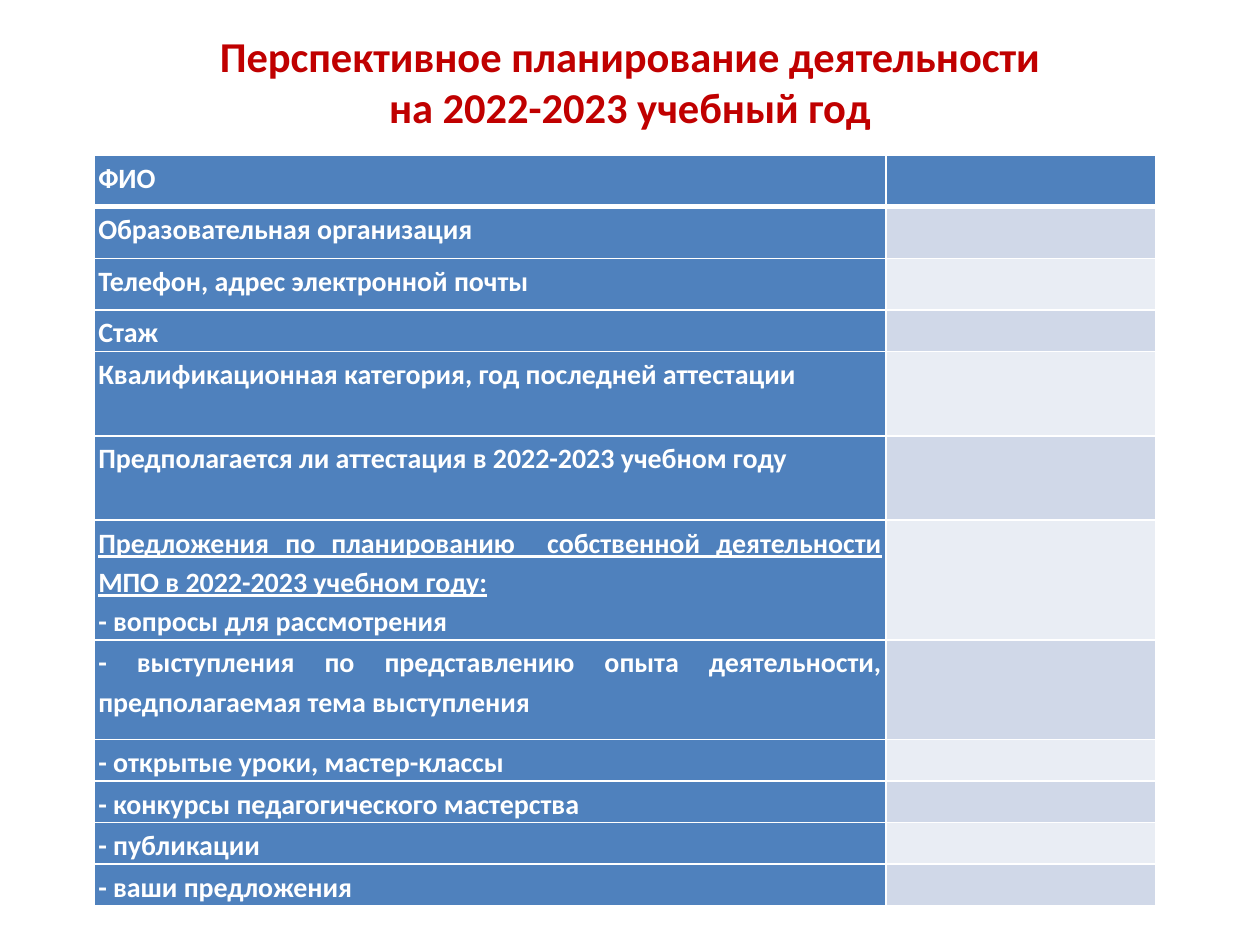
from lxml import etree
from pptx import Presentation
from pptx.dml.color import RGBColor
from pptx.enum.text import MSO_ANCHOR, PP_ALIGN
from pptx.oxml.ns import qn
from pptx.util import Inches, Pt

RED, WHITE, BLUE = "C00000", "FFFFFF", "4F81BD"
BANDS = ["E9EDF4", "D0D8E8"]

TITLE = "Перспективное планирование деятельности\vна 2022-2023 учебный год"

# Row height in inches, then the paragraphs of the label
ROWS = [
    (0.41, ["ФИО"]),
    (0.41, ["Образовательная организация"]),
    (0.41, ["Телефон, адрес электронной почты"]),
    (0.33, ["Стаж"]),
    (0.67, ["Квалификационная категория, год последней аттестации"]),
    (0.67, ["Предполагается ли аттестация в 2022-2023 учебном году"]),
    (0.95, ["Предложения по планированию  собственной деятельности "
            "МПО в 2022-2023 учебном году:",
            "- вопросы для рассмотрения"]),
    (0.79, ["- выступления по представлению опыта деятельности, "
            "предполагаемая тема выступления"]),
    (0.33, ["- открытые уроки, мастер-классы"]),
    (0.33, ["- конкурсы педагогического мастерства"]),
    (0.33, ["- публикации"]),
    (0.33, ["- ваши предложения"]),
]
COLUMN_WIDTHS = [6.28, 2.14]
CELL_MARGINS = {"margin_left": Inches(0.03), "margin_top": Inches(0.01),
                "margin_right": Inches(0.03), "margin_bottom": 0}


def color(hex_value):
    return RGBColor.from_string(hex_value)


def apply(target, values):
    for name, value in values.items():
        setattr(target, name, value)


def style_runs(paragraph, size, hex_value, underline=False):
    for run in paragraph.runs:
        apply(run.font, {"name": "Calibri", "size": Pt(size), "bold": True,
                         "underline": underline})
        run.font.color.rgb = color(hex_value)


def set_borders(cell, widths):
    """Draw white borders; widths maps a side (L, R, T, B) to points."""
    properties = cell._tc.get_or_add_tcPr()
    for position, (side, width) in enumerate(widths.items()):
        line = etree.Element(qn(f"a:ln{side}"), w=str(Pt(width)))
        fill = etree.SubElement(line, qn("a:solidFill"))
        etree.SubElement(fill, qn("a:srgbClr"), val=WHITE)
        properties.insert(position, line)


def add_title(slide, left, top, width, height):
    frame = slide.shapes.add_textbox(left, top, width, height).text_frame
    apply(frame, {"word_wrap": True, "vertical_anchor": MSO_ANCHOR.MIDDLE})
    heading = frame.paragraphs[0]
    heading.text = TITLE
    heading.alignment = PP_ALIGN.CENTER
    style_runs(heading, 24.3, RED)


def fill_label(cell, lines):
    frame = cell.text_frame
    frame.text = "\n".join(lines)
    for paragraph in frame.paragraphs:
        apply(paragraph, {"alignment": PP_ALIGN.JUSTIFY, "line_spacing": 1.15})
        # The lead line of a list of proposals is underlined
        style_runs(paragraph, 16, WHITE, paragraph.text.endswith(":"))


def add_plan_table(slide, left, top, width, height):
    table = slide.shapes.add_table(len(ROWS), len(COLUMN_WIDTHS),
                                   left, top, width, height).table
    for column, column_width in zip(table.columns, COLUMN_WIDTHS):
        column.width = Inches(column_width)

    for index, (row_height, lines) in enumerate(ROWS):
        table.rows[index].height = Inches(row_height)
        label, answer = table.cell(index, 0), table.cell(index, 1)
        fill_label(label, lines)
        answer_fill = BLUE if index == 0 else BANDS[index % 2]
        borders = {"L": 1, "R": 1, "T": 3 if index == 1 else 1,
                   "B": 3 if index == 0 else 1}
        for cell, fill in ((label, BLUE), (answer, answer_fill)):
            apply(cell, CELL_MARGINS)
            cell.fill.solid()
            cell.fill.fore_color.rgb = color(fill)
            set_borders(cell, borders)


def main():
    presentation = Presentation()
    apply(presentation, {"slide_width": Inches(10), "slide_height": Inches(7.5)})
    slide = presentation.slides.add_slide(presentation.slide_layouts[6])
    add_title(slide, Inches(0.5), Inches(0.3), Inches(9), Inches(0.69))
    add_plan_table(slide, Inches(0.75), Inches(1.23), Inches(8.42), Inches(5.96))
    presentation.save("out.pptx")


if __name__ == "__main__":
    main()
